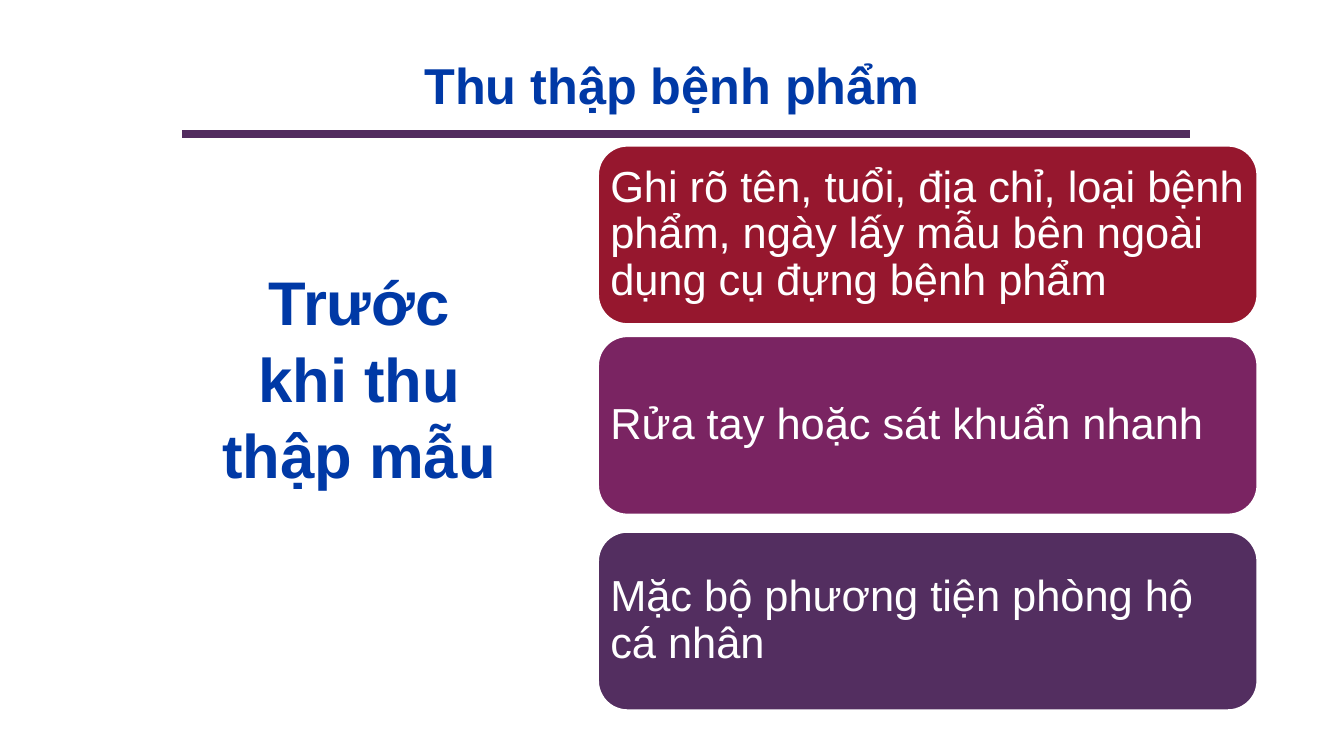
from lxml.etree import SubElement
from pptx import Presentation
from pptx.dml.color import RGBColor as Rgb
from pptx.enum.shapes import MSO_CONNECTOR as Conn, MSO_SHAPE as Kind
from pptx.enum.text import MSO_ANCHOR as Anchor, PP_ALIGN as Align
from pptx.oxml.ns import qn
from pptx.util import Cm, Pt

COLORS = {
    "blue": "0039A6",
    "white": "FFFFFF",
    "red": "96172E",
    "plum": "7A2462",
    "violet": "532E60",
    "rule": "522C5F",
}
STEPS = [  # offset from the top of the column, fill, text
    (0, "red", "Ghi rõ tên, tuổi, địa chỉ, loại bệnh phẩm, "
               "ngày lấy mẫu bên ngoài dụng cụ đựng bệnh phẩm"),
    (4.8, "plum", "Rửa tay hoặc sát khuẩn nhanh"),
    (9.73, "violet", "Mặc bộ phương tiện phòng hộ cá nhân"),
]


def color(name):
    return Rgb.from_string(COLORS[name])


def write(shape, text, size, hue="blue", bold=True, align=Align.CENTER,
          anchor=Anchor.MIDDLE, gap=1.0, pad=None):
    frame = shape.text_frame
    frame.word_wrap = True
    frame.vertical_anchor = anchor
    if pad is not None:
        frame.margin_left = frame.margin_right = Cm(pad)
    para = frame.paragraphs[0]
    para.alignment = align
    para.line_spacing = gap
    run = para.add_run()
    run.text = text
    font = run.font
    font.name, font.size, font.bold = "Arial", Pt(size), bold
    font.color.rgb = color(hue)


def add_head(slide, x, y, w, h):
    # Heading with the rule below it
    box = slide.shapes.add_textbox(Cm(x), Cm(y), Cm(w), Cm(h))
    write(box, "Thu thập bệnh phẩm", 36, anchor=Anchor.TOP)
    left, level = x - 0.91, y + 2.14
    rule = slide.shapes.add_connector(
        Conn.STRAIGHT, Cm(left), Cm(level), Cm(left + 25.4), Cm(level))
    rule.line.color.rgb = color("rule")
    rule.line.width = Pt(6)
    SubElement(rule._element.spPr, qn("a:effectLst"))


def add_title(slide, x, y, w, h):
    # Stage name on the left
    title = slide.shapes.title
    title.left, title.top = Cm(x), Cm(y)
    title.width, title.height = Cm(w), Cm(h)
    write(title, "Trước khi thu thập mẫu", 44, gap=1.04)


def add_steps(slide, x, y, w, h):
    # Column of rounded cards
    for drop, fill, text in STEPS:
        card = slide.shapes.add_shape(
            Kind.ROUNDED_RECTANGLE, Cm(x), Cm(y + drop), Cm(w), Cm(h))
        card.shadow.inherit = False
        card.fill.solid()
        card.fill.fore_color.rgb = color(fill)
        card.line.color.rgb = color("white")
        card.line.width = Pt(2)
        write(card, text, 31, "white", bold=False, align=Align.LEFT,
              gap=0.9, pad=0.1)


def main():
    deck = Presentation()
    deck.slide_width, deck.slide_height = Cm(33.87), Cm(19.05)
    slide = deck.slides.add_slide(deck.slide_layouts[5])
    add_title(slide, 5.23, 2.82, 7.65, 13.31)
    add_steps(slide, 15.06, 3.66, 16.64, 4.52)
    add_head(slide, 5.51, 1.24, 22.86, 3.18)
    deck.save("out.pptx")


if __name__ == "__main__":
    main()
